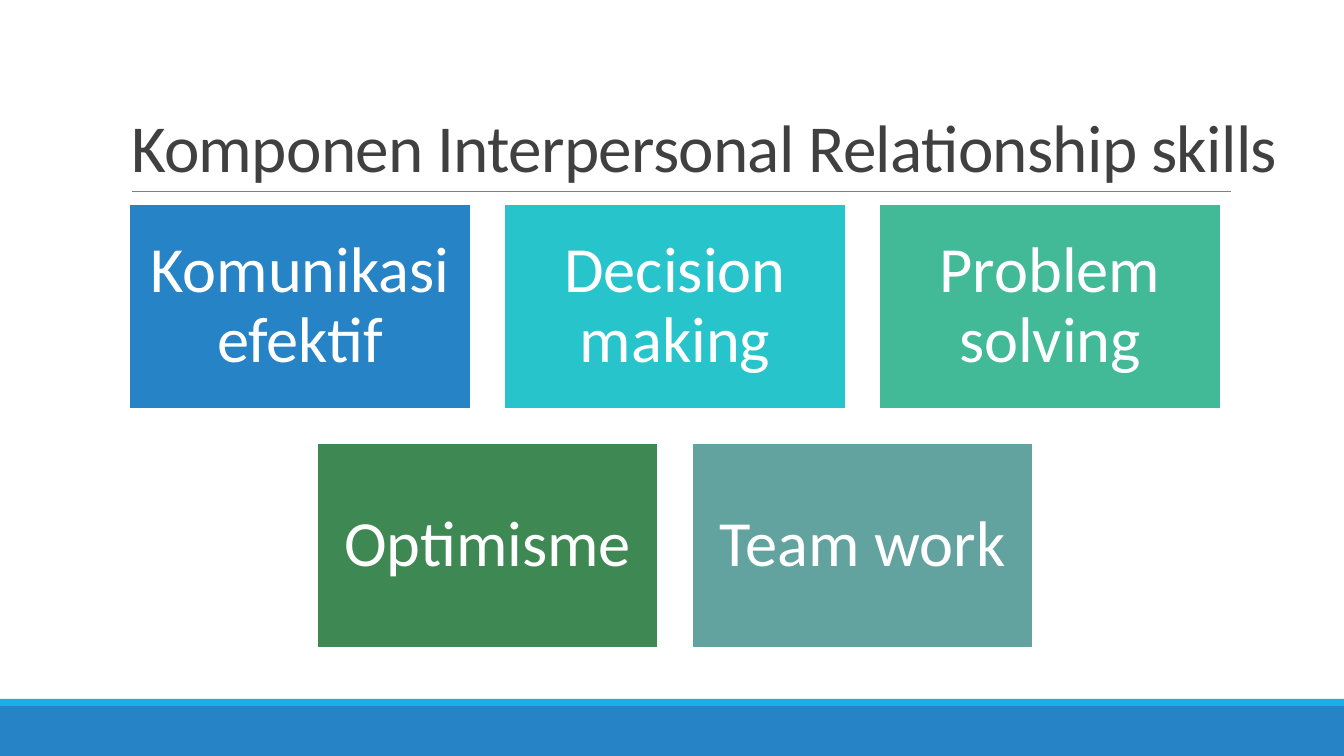
"""Build the slide on the components of interpersonal relationship skills."""
from lxml import etree
from pptx import Presentation
from pptx import util as u
from pptx.dml.color import RGBColor
from pptx.enum import shapes, text
from pptx.oxml.ns import qn

TITLE = "Komponen Interpersonal Relationship skills"
ROWS = [
    [("Komunikasi efektif", "2683C6"), ("Decision making", "28C4CC"),
     ("Problem solving", "42BA97")],
    [("Optimisme", "3E8853"), ("Team work", "62A39F")],
]
BANDS = [((0, 706, 1344, 50), "2683C6"), ((0, 699, 1344, 7), "1CADE4")]
RULE = (132, 191, 1231, 191)
HEAD = (121, 31, 1172, 160)
MID, TOP = 675, 204
WIDE, HIGH, GAP = 341, 205, 34
PAD = 19
WHITE = "FFFFFF"


def px(*vals):
    return [round(v * 914400 / 100.8) for v in vals]


def tint(color):
    return RGBColor.from_string(color)


def apply(obj, opts):
    for key, val in opts.items():
        setattr(obj, key, val)


def write(shape, words, size, color, frame, para):
    tf = shape.text_frame
    tf.text = words
    apply(tf, {"word_wrap": True, "auto_size": text.MSO_AUTO_SIZE.NONE, **frame})
    par = tf.paragraphs[0]
    apply(par, para)
    run = par.runs[0]
    apply(run.font, {"name": "Calibri", "size": u.Pt(size)})
    run.font.color.rgb = tint(color)
    return run


def box(slide, area, color, edge=None):
    shape = slide.shapes.add_shape(shapes.MSO_SHAPE.RECTANGLE, *px(*area))
    shape.shadow.inherit = False
    shape.fill.solid()
    shape.fill.fore_color.rgb = tint(color)
    if edge:
        shape.line.color.rgb = tint(edge)
        shape.line.width = u.Pt(1.25)
    else:
        shape.line.fill.background()
    return shape


def main():
    prs = Presentation()
    prs.slide_width, prs.slide_height = px(1344, 756)
    slide = prs.slides.add_slide(prs.slide_layouts[5])

    for area, color in BANDS:
        box(slide, area, color)
    rule = slide.shapes.add_connector(shapes.MSO_CONNECTOR.STRAIGHT, *px(*RULE))
    rule.line.color.rgb = tint("808080")
    rule.line.width = u.Pt(0.5)
    etree.SubElement(rule._element.spPr, qn("a:effectLst"))

    title = slide.shapes.title
    apply(title, dict(zip(("left", "top", "width", "height"), px(*HEAD))))
    run = write(title, TITLE, 48, "404040",
                {"vertical_anchor": text.MSO_ANCHOR.BOTTOM},
                {"alignment": text.PP_ALIGN.LEFT, "line_spacing": 0.85})
    run._r.get_or_add_rPr().set("spc", "-50")

    pad = px(PAD)[0]
    sides = ("margin_left", "margin_top", "margin_right", "margin_bottom")
    frame = {"vertical_anchor": text.MSO_ANCHOR.MIDDLE, **dict.fromkeys(sides, pad)}
    para = {"alignment": text.PP_ALIGN.CENTER, "line_spacing": 0.9}
    for r, row in enumerate(ROWS):
        left = MID - (len(row) * (WIDE + GAP) - GAP) / 2
        for c, (words, color) in enumerate(row):
            area = (left + c * (WIDE + GAP), TOP + r * (HIGH + GAP), WIDE, HIGH)
            card = box(slide, area, color, WHITE)
            write(card, words, 46, WHITE, frame, para)

    prs.save("out.pptx")


if __name__ == "__main__":
    main()
